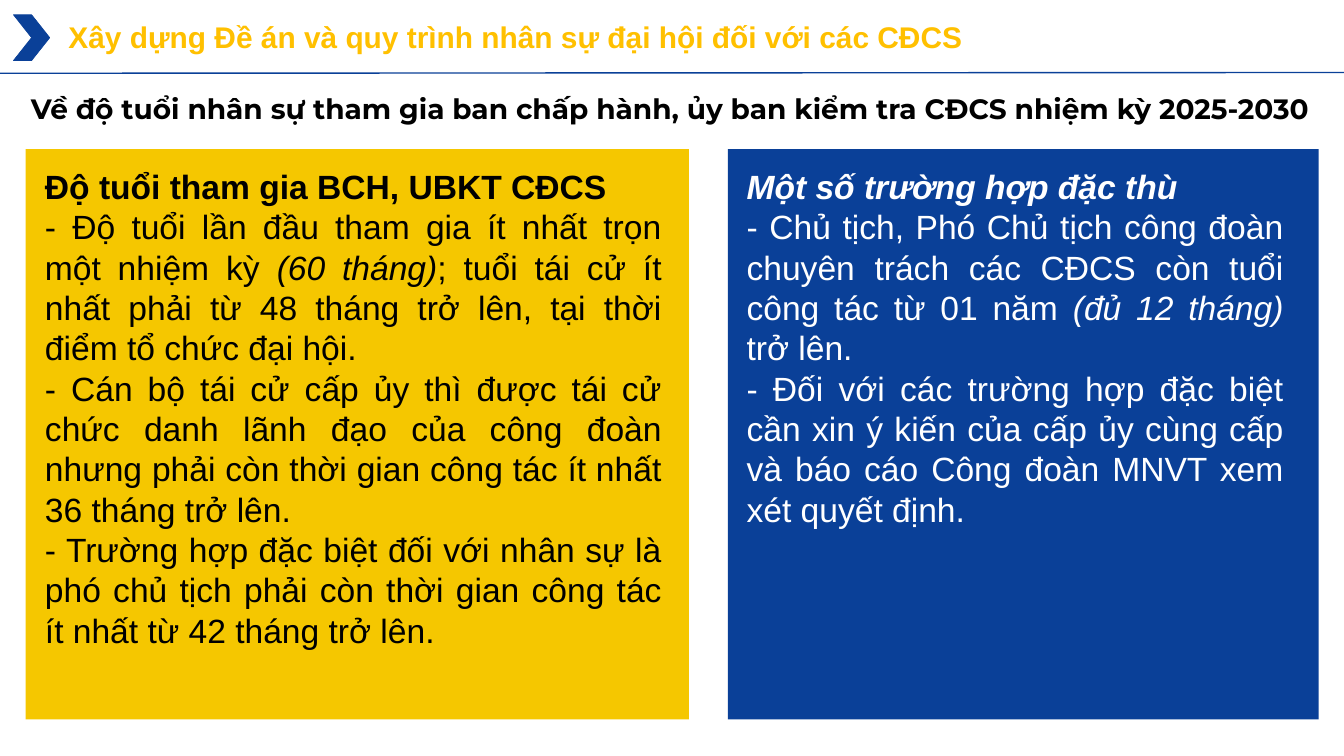
"""Build the slide on age rules for union committee candidates."""
import pptx
import pptx.dml.color
import pptx.enum.shapes
import pptx.enum.text
import pptx.oxml
import pptx.util
from pptx.util import Cm

COLORS = {
    "blue": "0A4098",
    "yellow": "F5C700",
    "gold": "FFC000",
    "black": "000000",
    "white": "FFFFFF",
}
SHAPES = pptx.enum.shapes.MSO_SHAPE
ALIGN = pptx.enum.text.PP_ALIGN
ANCHOR = pptx.enum.text.MSO_ANCHOR
AUTO_SIZE = pptx.enum.text.MSO_AUTO_SIZE

AGE_RULES = [
    [("Độ tuổi tham gia BCH, UBKT CĐCS", "b")],
    [
        ("- Độ tuổi lần đầu tham gia ít nhất trọn một nhiệm kỳ ", ""),
        ("(60 tháng)", "i"),
        ("; tuổi tái cử ít nhất phải từ 48 tháng trở lên, tại thời điểm tổ chức đại hội.", ""),
    ],
    [("- Cán bộ tái cử cấp ủy thì được tái cử chức danh lãnh đạo của công đoàn "
      "nhưng phải còn thời gian công tác ít nhất 36 tháng trở lên.", "")],
    [("- Trường hợp đặc biệt đối với nhân sự là phó chủ tịch phải còn thời gian "
      "công tác ít nhất từ 42 tháng trở lên.", "")],
]
SPECIAL_CASES = [
    [("Một số trường hợp đặc thù", "bi")],
    [
        ("- Chủ tịch, Phó Chủ tịch công đoàn chuyên trách các CĐCS còn tuổi công tác từ 01 năm ", ""),
        ("(đủ 12 tháng) ", "i"),
        ("trở lên.", ""),
    ],
    [("- Đối với các trường hợp đặc biệt cần xin ý kiến của cấp ủy cùng cấp "
      "và báo cáo Công đoàn MNVT xem xét quyết định.", "")],
]


class SlideBuilder:
    """Holds the style and the current slide."""

    def __init__(self, slide, font="Arial", insets=(0.38, 0.18)):
        self.slide = slide
        self.font = font
        self.insets = insets

    def color(self, name):
        return pptx.dml.color.RGBColor.from_string(COLORS[name])

    def rule(self, start, end, color, width):
        line = self.slide.shapes.add_connector(
            pptx.enum.shapes.MSO_CONNECTOR.STRAIGHT, *map(Cm, start + end))
        line.line.color.rgb = self.color(color)
        line.line.width = pptx.util.Pt(width)
        properties = line._element.spPr
        properties.append(pptx.oxml.parse_xml(
            '<a:effectLst xmlns:a="http://schemas.openxmlformats.org/drawingml/2006/main"/>'))

    def shape(self, kind, box, fill, outline=None):
        shape = self.slide.shapes.add_shape(kind, *map(Cm, box))
        shape.shadow.inherit = False
        shape.fill.solid()
        shape.fill.fore_color.rgb = self.color(fill)
        if outline:
            shape.line.color.rgb = self.color(fill)
            shape.line.width = pptx.util.Pt(outline)
        else:
            shape.line.fill.background()

    def text(self, box, paragraphs, size, color, font=None, align=ALIGN.LEFT,
             anchor=ANCHOR.TOP, insets=None, grow=False):
        frame = self.slide.shapes.add_textbox(*map(Cm, box)).text_frame
        frame.word_wrap = True
        frame.auto_size = AUTO_SIZE.SHAPE_TO_FIT_TEXT if grow else AUTO_SIZE.NONE
        frame.vertical_anchor = anchor
        side, edge = insets or self.insets
        frame.margin_left = frame.margin_right = Cm(side)
        frame.margin_top = frame.margin_bottom = Cm(edge)
        frame.text = "\n".join(parts[0][0] for parts in paragraphs)
        for paragraph, parts in zip(frame.paragraphs, paragraphs):
            paragraph.alignment = align
            for content, _ in parts[1:]:
                paragraph.add_run().text = content
            for run, (_, style) in zip(paragraph.runs, parts):
                run.font.name = font or self.font
                run.font.size = pptx.util.Pt(size)
                run.font.color.rgb = self.color(color)
                run.font.bold = "b" in style
                run.font.italic = "i" in style


def main():
    presentation = pptx.Presentation()
    presentation.slide_width = Cm(50.8)
    presentation.slide_height = Cm(28.58)
    builder = SlideBuilder(presentation.slides.add_slide(presentation.slide_layouts[6]))

    builder.rule((0, 2.77), (50.8, 2.74), "blue", 1.5)
    builder.shape(SHAPES.CHEVRON, (0.51, 0.56, 1.37, 1.73), "blue", outline=0.75)
    builder.text((2.21, 0.51, 40.34, 1.75),
                 [[("Xây dựng Đề án và quy trình nhân sự đại hội đối với các CĐCS", "b")]],
                 32, "gold", grow=True)
    builder.text((1.17, 3.45, 54.41, 1.27),
                 [[("Về độ tuổi nhân sự tham gia ban chấp hành, ủy ban kiểm tra CĐCS "
                    "nhiệm kỳ 2025-2030", "b")]],
                 30, "black", font="Montserrat", anchor=ANCHOR.BOTTOM, insets=(0, 0), grow=True)

    panels = [
        (0.97, 25.07, "yellow", 1.32, 24.08, "black", AGE_RULES),
        (27.51, 22.33, "blue", 27.84, 21.06, "white", SPECIAL_CASES),
    ]
    for left, width, fill, text_left, text_width, color, paragraphs in panels:
        builder.shape(SHAPES.RECTANGLE, (left, 5.64, width, 21.56), fill)
        builder.text((text_left, 6.1, text_width, 15.32), paragraphs, 36, color,
                     align=ALIGN.JUSTIFY)

    presentation.save("out.pptx")


if __name__ == "__main__":
    main()
